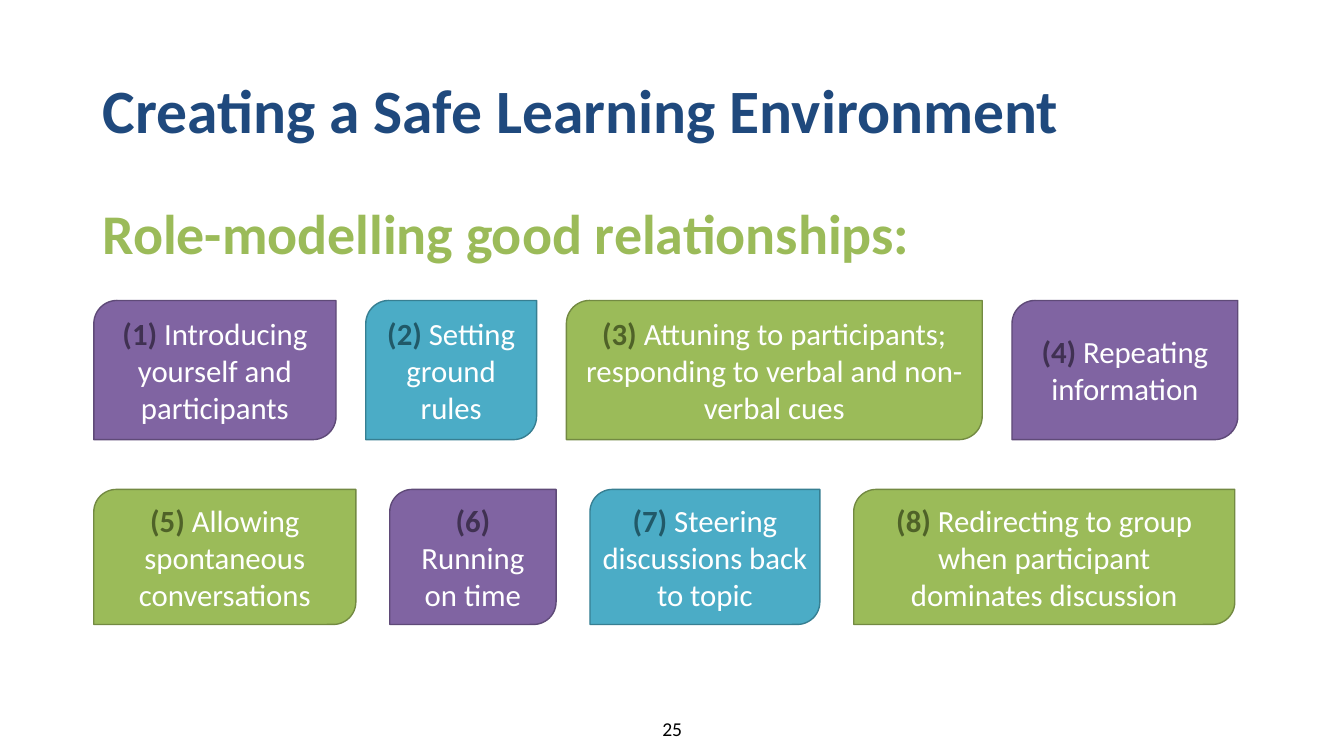
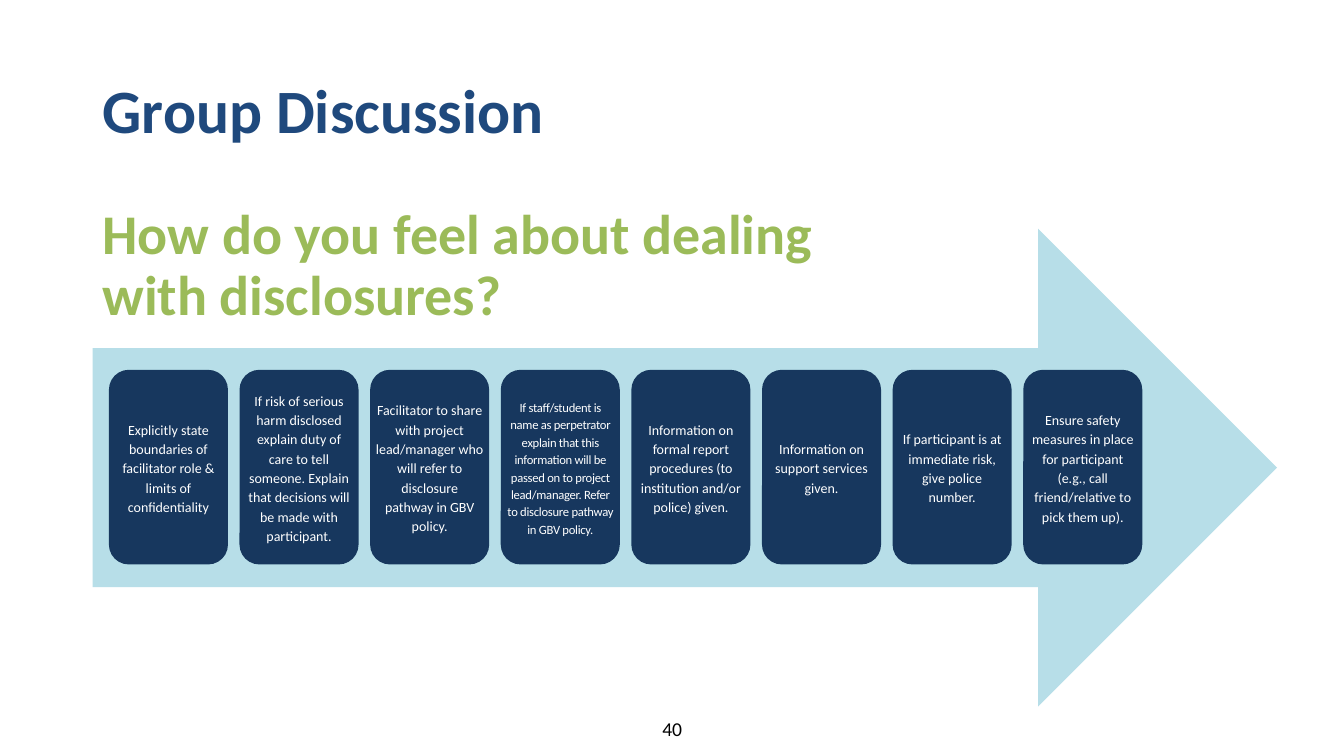
import pptx
import pptx.util
import pptx.dml.color
import pptx.enum.shapes
import pptx.enum.text

Pt = pptx.util.Pt
SHAPE = pptx.enum.shapes.MSO_SHAPE
ALIGN = pptx.enum.text.PP_ALIGN
ANCHOR = pptx.enum.text.MSO_ANCHOR

COLORS = {
    "title": "1F497D",
    "white": "FFFFFF",
    "black": "000000",
    "arrow": "B7DEE8",
    "card": "17375E",
    "green": "9BBB59",
    "green line": "738A42",
    "green number": "4F6228",
    "teal": "4BACC6",
    "teal line": "377F92",
    "teal number": "215968",
    "purple": "8064A2",
    "purple line": "5F4A78",
    "purple number": "403152",
}

ROWS = [
    (214.6, 99.4, 21.3, [
        (173, "purple", "Introducing yourself and participants"),
        (122, "teal", "Setting ground rules"),
        (297, "green", "Attuning to participants; responding to verbal and non-verbal cues"),
        (161.3, "purple", "Repeating information"),
    ]),
    (349.6, 96.5, 24.2, [
        (187.2, "green", "Allowing spontaneous conversations"),
        (118.8, "purple", "Running on time"),
        (164.2, "teal", "Steering discussions back to topic"),
        (272.2, "green", "Redirecting to group when participant dominates discussion"),
    ]),
]

STEPS = [
    "Explicitly state boundaries of facilitator role & limits of confidentiality",
    "If risk of serious harm disclosed explain duty of care to tell someone. "
    "Explain that decisions will be made with participant.",
    "Facilitator to share with project lead/manager who will refer to disclosure "
    "pathway in GBV policy.",
    "If staff/student is name as perpetrator explain that this information will be "
    "passed on to project lead/manager. Refer to disclosure pathway in GBV policy.",
    "Information on formal report procedures (to institution and/or police) given.",
    "Information on support services given.",
    "If participant is at immediate risk, give police number.",
    "Ensure safety measures in place for participant\n"
    "(e.g., call friend/relative to pick them up).",
]
LONG_STEP = 140
STEP_PITCH = 93.3


class Slides:
    font = "Calibri"
    left, width = 66.2, 828

    def __init__(self):
        self.deck = pptx.Presentation()
        self.deck.slide_width = Pt(960)
        self.deck.slide_height = Pt(540)
        self.page = None

    def color(self, name):
        return pptx.dml.color.RGBColor.from_string(COLORS[name])

    def style(self, span, size, color, bold=False):
        span.font.name = self.font
        span.font.size = Pt(size)
        span.font.bold = bold
        span.font.color.rgb = self.color(color)

    def fill_para(self, para, text, size, color, bold=False, align=ALIGN.LEFT, spacing=1.0):
        para.text = text
        para.alignment = align
        para.line_spacing = spacing
        for span in para.runs:
            self.style(span, size, color, bold)

    def start(self, title, subtitle, number):
        self.page = self.deck.slides.add_slide(self.deck.slide_layouts[5])
        box = self.page.shapes.title
        box.left, box.top = Pt(self.left), Pt(28.8)
        box.width, box.height = Pt(self.width), Pt(104.4)
        frame = box.text_frame
        frame.auto_size = pptx.enum.text.MSO_AUTO_SIZE.NONE
        frame.vertical_anchor = ANCHOR.MIDDLE
        self.fill_para(frame.paragraphs[0], title, 44, "title", True, spacing=0.9)
        self.label(144, 342.7, subtitle, 40, "green", bold=True, spacing=0.9)
        self.label(508.3, 25.2, number, 14, "black", align=ALIGN.CENTER)

    def label(self, top, height, text, size, color, **options):
        box = self.page.shapes.add_textbox(
            Pt(self.left), Pt(top), Pt(self.width), Pt(height))
        box.text_frame.word_wrap = True
        self.fill_para(box.text_frame.paragraphs[0], text, size, color, **options)

    def shape(self, kind, left, top, width, height, fill, line=None, inset=7.2):
        shape = self.page.shapes.add_shape(kind, Pt(left), Pt(top), Pt(width), Pt(height))
        shape.shadow.inherit = False
        shape.fill.solid()
        shape.fill.fore_color.rgb = self.color(fill)
        if line:
            shape.line.color.rgb = self.color(line)
            shape.line.width = Pt(1)
        else:
            shape.line.fill.background()
        frame = shape.text_frame
        frame.word_wrap = True
        frame.vertical_anchor = ANCHOR.MIDDLE
        frame.margin_left = frame.margin_right = Pt(inset)
        frame.margin_top = frame.margin_bottom = Pt(min(inset, 3.6))
        return shape

    def tile(self, number, left, top, width, height, color, text):
        inset = 3 if color == "teal" else 7.2
        shape = self.shape(SHAPE.ROUND_2_DIAG_RECTANGLE, left, top, width, height,
                           color, f"{color} line", inset)
        para = shape.text_frame.paragraphs[0]
        self.fill_para(para, f"({number}) ", 22, f"{color} number", True, ALIGN.CENTER)
        span = para.add_run()
        span.text = text
        self.style(span, 22, "white")

    def card(self, left, text):
        shape = self.shape(SHAPE.ROUNDED_RECTANGLE, left, 264.2, 85, 139, "card", inset=0)
        para = shape.text_frame.paragraphs[0]
        is_long = len(text) > LONG_STEP
        self.fill_para(para, text, 9 if is_long else 10, "white",
                       align=ALIGN.CENTER, spacing=1.15)
        para.space_after = Pt(10)
        if is_long:
            for span in para.runs:
                span._r.get_or_add_rPr().set("spc", "-20")


def main():
    slides = Slides()

    slides.start("Creating a Safe Learning Environment",
                 "Role-modelling good relationships:", "25")
    number = 0
    for top, height, gap, tiles in ROWS:
        left = 67
        for width, color, text in tiles:
            number += 1
            slides.tile(number, left, top, width, height, color, text)
            left += width + gap

    slides.start("Group Discussion",
                 "How do you feel about dealing\nwith disclosures?", "40")
    slides.shape(SHAPE.RIGHT_ARROW, slides.left, 163.4, 846, 341.3, "arrow")
    for index, text in enumerate(STEPS):
        slides.card(77.8 + index * STEP_PITCH, text)

    slides.deck.save("out.pptx")


if __name__ == "__main__":
    main()
